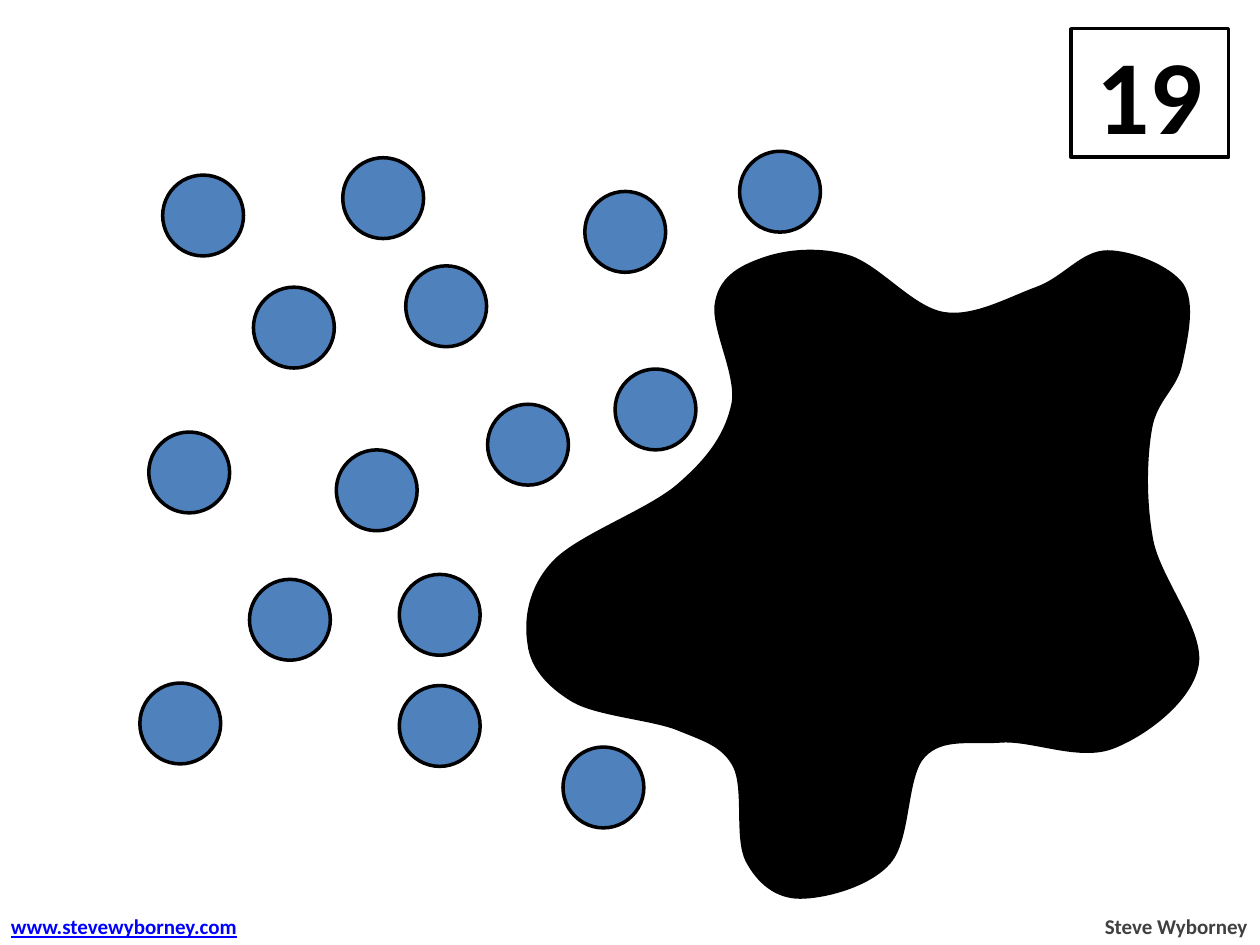
from lxml.etree import SubElement
from pptx import Presentation
from pptx.dml.color import RGBColor
from pptx.enum.shapes import MSO_SHAPE
from pptx.enum.text import MSO_ANCHOR, PP_ALIGN
from pptx.oxml.ns import qn
from pptx.util import Cm, Pt

BLACK, WHITE, BLUE = "000000", "FFFFFF", "4F81BD"
GRAY, LINK_BLUE = "404040", "0000FF"

DOT_SIZE = 1.63
DOTS = [
    (3.28, 3.53), (6.91, 3.18), (11.79, 3.86), (14.91, 3.05),
    (5.11, 5.79), (8.18, 5.36), (9.83, 8.15), (12.4, 7.44),
    (3, 8.71), (6.78, 9.07), (5.03, 11.68), (8.05, 11.58),
    (2.82, 13.77), (8.05, 13.82), (11.35, 15.06),
]

# Splat outline on a grid 530 units wide: two control points and an end per curve
SPLAT_GRID_WIDTH = 530
SPLAT_START = (35, 356)
SPLAT_CURVES = [
    ((15, 344), (2, 329), (0, 311)),
    ((-3, 292), (0, 267), (20, 246)),
    ((40, 225), (97, 205), (120, 184)),
    ((144, 163), (157, 144), (162, 120)),
    ((166, 96), (144, 58), (149, 39)),
    ((153, 19), (170, 11), (188, 5)),
    ((206, -1), (231, -3), (254, 4)),
    ((278, 12), (304, 45), (329, 49)),
    ((353, 53), (381, 37), (403, 29)),
    ((425, 21), (439, 0), (459, 0)),
    ((478, 0), (508, 12), (518, 26)),
    ((528, 41), (521, 70), (517, 89)),
    ((513, 108), (497, 117), (493, 140)),
    ((489, 163), (488, 197), (494, 229)),
    ((500, 260), (535, 301), (530, 328)),
    ((525, 356), (489, 383), (463, 393)),
    ((437, 403), (401, 387), (376, 388)),
    ((351, 390), (328, 384), (313, 400)),
    ((298, 416), (302, 465), (286, 484)),
    ((270, 503), (234, 512), (215, 512)),
    ((196, 512), (182, 500), (173, 483)),
    ((164, 465), (172, 426), (163, 408)),
    ((154, 391), (139, 387), (117, 378)),
    ((96, 370), (54, 367), (35, 356)),
]


def rgb(hex_color):
    return RGBColor.from_string(hex_color)


def paint(shape, fill):
    """Fill a shape and give it the black outline used throughout."""
    shape.shadow.inherit = False
    shape.fill.solid()
    shape.fill.fore_color.rgb = rgb(fill)
    shape.line.color.rgb = rgb(BLACK)
    shape.line.width = Pt(2)


def write(shape, text, size=12, color=BLACK, align=PP_ALIGN.LEFT,
          anchor=MSO_ANCHOR.TOP, underline=False, wrap=False):
    frame = shape.text_frame
    frame.word_wrap = wrap
    frame.vertical_anchor = anchor
    paragraph = frame.paragraphs[0]
    paragraph.alignment = align
    run = paragraph.add_run()
    run.text = text
    font = run.font
    font.name, font.size, font.bold = "Calibri", Pt(size), True
    font.underline = underline
    font.color.rgb = rgb(color)


def add_total(slide, left, top, width, height, total):
    total_box = slide.shapes.add_shape(
        MSO_SHAPE.RECTANGLE, Cm(left), Cm(top), Cm(width), Cm(height))
    paint(total_box, WHITE)
    write(total_box, total, size=60, align=PP_ALIGN.CENTER,
          anchor=MSO_ANCHOR.MIDDLE, wrap=True)


def add_dots(slide, left, top):
    for x, y in DOTS:
        dot = slide.shapes.add_shape(
            MSO_SHAPE.OVAL, Cm(left + x), Cm(top + y), Cm(DOT_SIZE), Cm(DOT_SIZE))
        paint(dot, BLUE)


def add_splat(slide, left, top, width):
    """Draw the splat, turning each straight segment into its Bézier curve."""
    builder = slide.shapes.build_freeform(
        *SPLAT_START, scale=Cm(width) / SPLAT_GRID_WIDTH)
    builder.add_line_segments([curve[-1] for curve in SPLAT_CURVES], close=True)
    splat = builder.convert_to_shape(Cm(left), Cm(top))
    paint(splat, BLACK)
    segments = list(splat._element.iter(qn("a:lnTo")))
    for segment, curve in zip(segments, SPLAT_CURVES):
        segment.tag = qn("a:cubicBezTo")
        segment.remove(segment[0])
        for x, y in curve:
            SubElement(segment, qn("a:pt"), x=str(x), y=str(y))


def add_footer(slide, left, top, width, height):
    site_width, author_width = 5.2, 3.4
    site = slide.shapes.add_textbox(
        Cm(left), Cm(top), Cm(site_width), Cm(height))
    write(site, "www.stevewyborney.com", color=LINK_BLUE, underline=True)
    author = slide.shapes.add_textbox(
        Cm(left + width - author_width), Cm(top), Cm(author_width), Cm(height))
    write(author, "Steve Wyborney", color=GRAY, align=PP_ALIGN.RIGHT)


def main():
    deck = Presentation()
    deck.slide_width, deck.slide_height = Cm(25.4), Cm(19.05)
    slide = deck.slides.add_slide(deck.slide_layouts[6])
    add_total(slide, 21.59, 0.58, 3.18, 2.59, "19")
    add_dots(slide, 0, 0)
    add_footer(slide, -0.03, 18.29, 25.43, 0.77)
    add_splat(slide, 10.67, 5.08, 13.46)
    deck.save("out.pptx")


if __name__ == "__main__":
    main()
